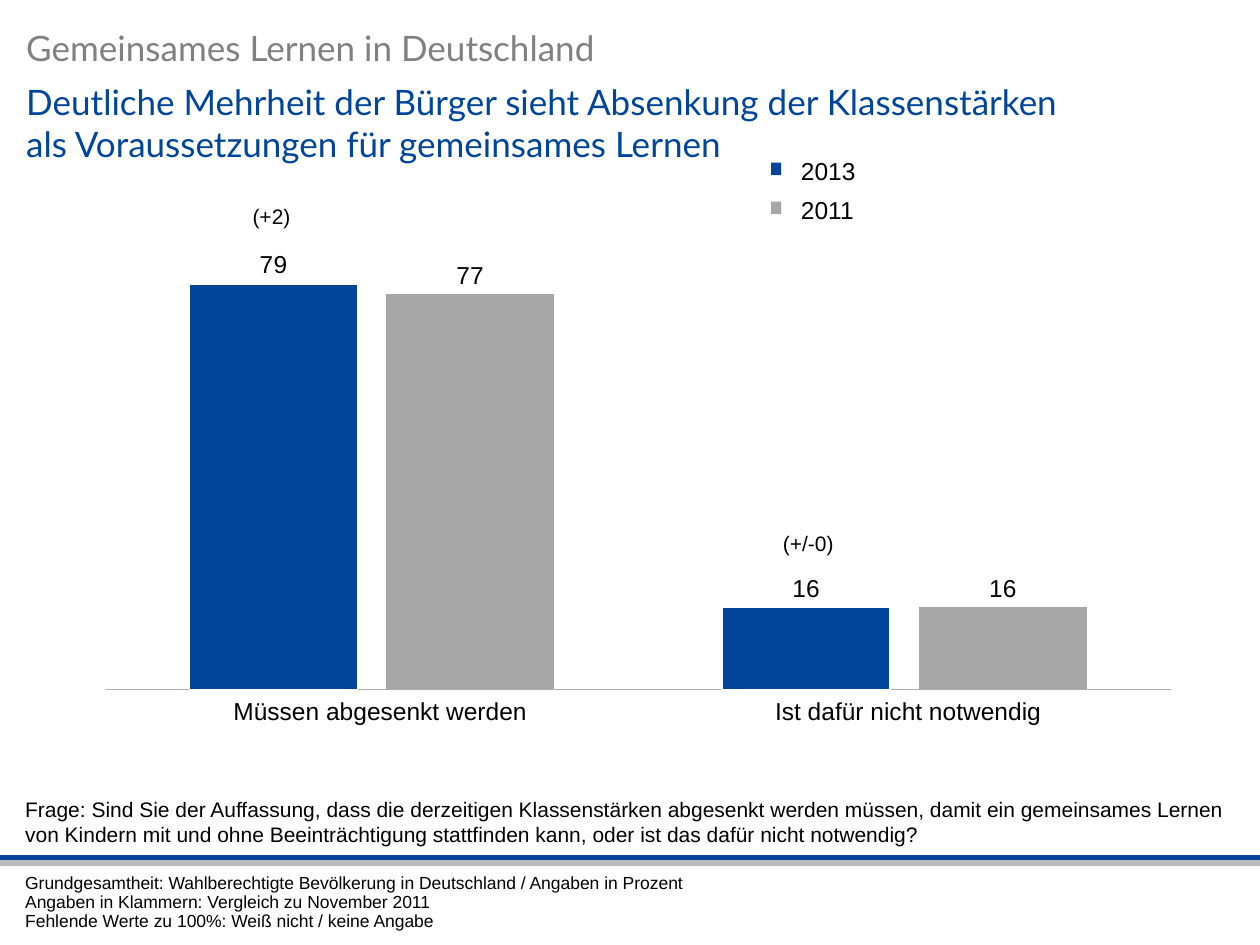
from lxml import etree
from pptx import Presentation
from pptx.chart.data import CategoryChartData
from pptx.dml.color import RGBColor
from pptx.enum.chart import XL_CHART_TYPE, XL_LABEL_POSITION, XL_TICK_LABEL_POSITION, XL_TICK_MARK
from pptx.enum.shapes import MSO_CONNECTOR, MSO_SHAPE
from pptx.enum.text import MSO_ANCHOR, MSO_AUTO_SIZE, PP_ALIGN
from pptx.oxml import parse_xml
from pptx.oxml.ns import nsdecls, qn
from pptx.util import Pt

COLUMNS = XL_CHART_TYPE.COLUMN_CLUSTERED
OUTSIDE = XL_LABEL_POSITION.OUTSIDE_END
NO_LABELS = XL_TICK_LABEL_POSITION.NONE
NO_TICKS = XL_TICK_MARK.NONE
STRAIGHT = MSO_CONNECTOR.STRAIGHT
RECT = MSO_SHAPE.RECTANGLE
TOP, BOTTOM = MSO_ANCHOR.TOP, MSO_ANCHOR.BOTTOM
LEFT, CENTER = PP_ALIGN.LEFT, PP_ALIGN.CENTER

COLORS = {"blue": "004599", "bar_gray": "A6A6A6", "rule_gray": "B7BCC1",
          "axis": "ADADAD", "kicker": "808080", "black": "000000", "white": "FFFFFF"}
SERIES = [("2013", (79, 16), "blue"), ("2011", (77, 16), "bar_gray")]


def rgb(name):
    return RGBColor.from_string(COLORS[name])


def write(tf, text, size=12, font="Arial", color="black", align=LEFT,
          anchor=TOP, spacing=None, margins=(0, 0, 0, 0)):
    """Fill a text frame, one paragraph per line of text."""
    tf.word_wrap = True
    tf.auto_size = MSO_AUTO_SIZE.NONE
    tf.vertical_anchor = anchor
    tf.margin_left, tf.margin_top, tf.margin_right, tf.margin_bottom = map(Pt, margins)
    for i, line in enumerate(text.split("\n")):
        p = tf.paragraphs[0] if i == 0 else tf.add_paragraph()
        p.alignment = align
        if spacing:
            p.line_spacing = spacing
        r = p.add_run()
        r.text = line
        r.font.size, r.font.name = Pt(size), font
        r.font.color.rgb = rgb(color)


def add_text(slide, box, text, **fmt):
    sp = slide.shapes.add_textbox(*map(Pt, box))
    write(sp.text_frame, text, **fmt)


def add_header(slide, x, y, w):
    add_text(slide, (x, y, w, 31), "Gemeinsames Lernen in Deutschland",
             size=20, font="Lato", color="kicker")
    title = slide.shapes.title
    title.left, title.top, title.width, title.height = map(Pt, (x, y + 31, w, 57.6))
    write(title.text_frame, "Deutliche Mehrheit der Bürger sieht Absenkung der "
          "Klassenstärken als Voraussetzungen für gemeinsames Lernen",
          size=20, font="Lato", color="blue")


def add_bars(slide, x, y, w, h):
    data = CategoryChartData()
    data.categories = ["1", "2"]
    for name, values, _ in SERIES:
        data.add_series(name, values)
    chart = slide.shapes.add_chart(COLUMNS, *map(Pt, (x, y, w, h)), data).chart
    chart.has_legend = chart.has_title = False
    chart.font.size, chart.font.name = Pt(14), "Arial"
    chart.font.color.rgb = rgb("black")

    cat, val = chart.category_axis, chart.value_axis
    cat.tick_label_position = NO_LABELS
    cat.major_tick_mark = cat.minor_tick_mark = NO_TICKS
    cat.format.line.color.rgb = rgb("axis")
    cat.format.line.width = Pt(1)
    val.minimum_scale, val.maximum_scale, val.major_unit = 0, 100, 20
    val.has_major_gridlines = False
    val.visible = False

    plot = chart.plots[0]
    plot.gap_width, plot.overlap, plot.vary_by_categories = 100, -17, False
    for ser, (_, _, color) in zip(plot.series, SERIES):
        ser.format.fill.solid()
        ser.format.fill.fore_color.rgb = rgb(color)
        labels = ser.data_labels
        labels.show_value, labels.position = True, OUTSIDE
    outline = plot.series[0].format.line
    outline.color.rgb, outline.width = rgb("white"), Pt(1)

    area = chart._chartSpace.chart.plotArea
    for old in area.findall(qn("c:layout")):
        area.remove(old)
    area.insert(0, parse_xml(
        f'<c:layout {nsdecls("c")}><c:manualLayout><c:layoutTarget val="inner"/>'
        '<c:xMode val="edge"/><c:yMode val="edge"/><c:x val="0"/><c:y val="0"/>'
        '<c:w val="1"/><c:h val="0.984"/></c:manualLayout></c:layout>'))

    for dx, dy, change in ((70.5, 12.2, "(+2)"), (377.2, 198.7, "(+/-0)")):
        add_text(slide, (x + dx, y + dy, 49.7, 21.6), change, align=CENTER,
                 margins=(7.2, 3.6, 7.2, 3.6))


def add_category_table(slide, x, y, w, h):
    frame = slide.shapes.add_table(1, 2, *map(Pt, (x, y, w, h)))
    table = frame.table
    table.first_row = table.horz_banding = False
    labels = (("Müssen abgesenkt werden", 64), ("Ist dafür nicht notwendig", 21.5))
    for cell, (text, indent) in zip(table.rows[0].cells, labels):
        cell.fill.background()
        write(cell.text_frame, text, size=14, align=CENTER)
        cell.margin_left = Pt(indent)
        cell.margin_top = cell.margin_right = cell.margin_bottom = Pt(2.9)
        tc_pr = cell._tc.get_or_add_tcPr()
        for i, side in enumerate(("lnL", "lnR", "lnT", "lnB")):
            border = parse_xml(f'<a:{side} {nsdecls("a")} w="0"><a:noFill/></a:{side}>')
            tc_pr.insert(i, border)


def add_legend(slide, x, y):
    for i, (name, _, color) in enumerate(SERIES):
        top = y + i * 22.3
        add_text(slide, (x + 10, top, 82, 24.5), name, size=14,
                 margins=(7.2, 3.6, 7.2, 3.6))
        key = slide.shapes.add_shape(RECT, *map(Pt, (x, top + 7.2, 5.8, 7.2)))
        key.shadow.inherit = False
        key.fill.solid()
        key.fill.fore_color.rgb = rgb(color)
        key.line.fill.background()


def add_footer(slide, x, y):
    add_text(slide, (x, y, 693, 44), "Frage: Sind Sie der Auffassung, dass die "
             "derzeitigen Klassenstärken abgesenkt werden müssen, damit ein "
             "gemeinsames Lernen von Kindern mit und ohne Beeinträchtigung "
             "stattfinden kann, oder ist das dafür nicht notwendig?", anchor=BOTTOM)
    for dy, color in ((50.3, "blue"), (53.2, "rule_gray")):
        rule = slide.shapes.add_connector(STRAIGHT, 0, Pt(y + dy), Pt(720), Pt(y + dy))
        rule.line.color.rgb, rule.line.width = rgb(color), Pt(3)
        etree.SubElement(rule._element.spPr, qn("a:effectLst"))
    add_text(slide, (x, y + 59.7, 548, 35.3),
             "Grundgesamtheit: Wahlberechtigte Bevölkerung in Deutschland / Angaben in Prozent\n"
             "Angaben in Klammern: Vergleich zu November 2011\n"
             "Fehlende Werte zu 100%: Weiß nicht / keine Angabe", size=10, spacing=0.9)


def main():
    prs = Presentation()
    prs.slide_width, prs.slide_height = Pt(720), Pt(540)
    slide = prs.slides.add_slide(prs.slide_layouts[5])
    add_bars(slide, 59.8, 100.8, 609.8, 298)
    add_header(slide, 15, 15, 602)
    add_category_table(slide, 25.2, 396, 646, 22)
    add_legend(slide, 440.6, 85.7)
    add_footer(slide, 14.4, 440)
    prs.save("out.pptx")


if __name__ == "__main__":
    main()
